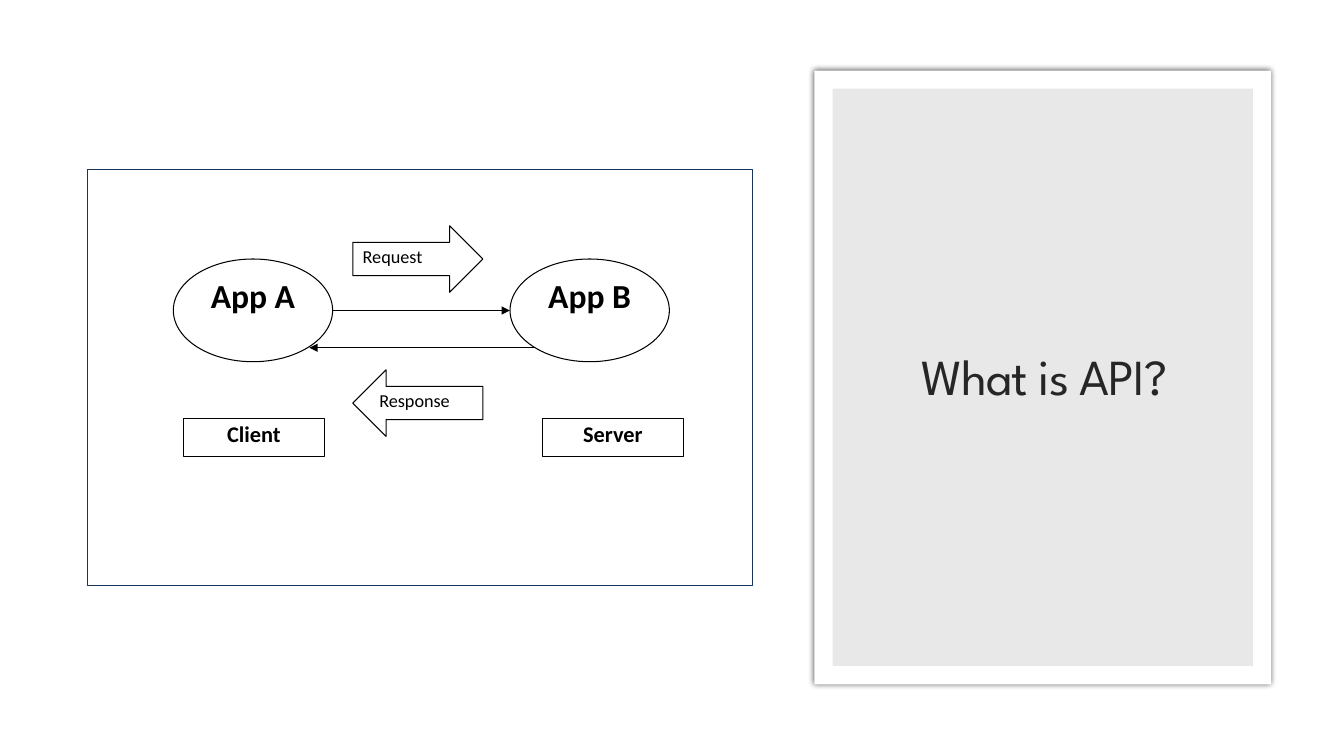
from dataclasses import dataclass
from lxml.etree import SubElement as Sub
from pptx import Presentation as Deck
from pptx.dml.color import RGBColor as Rgb
from pptx.enum.shapes import MSO_CONNECTOR as Link, MSO_SHAPE as Kind
from pptx.enum.text import MSO_ANCHOR as Anchor, MSO_AUTO_SIZE as Fit, PP_ALIGN as Align
from pptx.oxml.ns import qn
from pptx.shapes.autoshape import Shape
from pptx.slide import Slide
from pptx.text.text import TextFrame as Frame
from pptx.util import Pt


@dataclass(frozen=True)
class Theme:
    white: str = "FFFFFF"
    ink: str = "000000"
    navy: str = "17365D"
    grey: str = "D9D9D9"
    dark: str = "262626"
    head: str = "League Spartan"
    body: str = "Calibri"
    title: float = 36
    app: float = 24
    role: float = 16
    call: float = 13
    line: float = 0.75


@dataclass(frozen=True)
class Box:
    left: float
    top: float
    width: float
    height: float

    def inset(self, gap: float) -> "Box":
        return Box(self.left + gap, self.top + gap,
                   self.width - 2 * gap, self.height - 2 * gap)


@dataclass(frozen=True)
class Node:
    text: str
    kind: Kind
    box: Box
    size: float
    bold: bool = True
    align: Align = Align.CENTER


@dataclass(frozen=True)
class Wire:
    start: float
    end: float
    level: float


THEME = Theme()
PANEL = Box(581.8, 50.4, 326.2, 438.5)
TITLE = Box(609.8, 76.3, 272.2, 388.8)
AREA = Box(62.6, 121, 475.2, 297.4)


def app(text: str, left: float) -> Node:
    return Node(text, Kind.OVAL, Box(left, 185, 113.8, 73.4), THEME.app)


def role(text: str, left: float) -> Node:
    return Node(text, Kind.RECTANGLE, Box(left, 298.8, 100.8, 27.4), THEME.role)


def call(text: str, kind: Kind, top: float) -> Node:
    return Node(text, kind, Box(252, top, 92.9, 47.5), THEME.call, False, Align.LEFT)


NODES = (
    app("App A", 123.8),
    app("App B", 364.3),
    role("Client", 131),
    role("Server", 387.4),
    call("Request", Kind.RIGHT_ARROW, 161.3),
    call("Response", Kind.LEFT_ARROW, 264.2),
)
WIRES = (Wire(237.6, 364.3, 221.8), Wire(381.6, 221, 248.4))


def place(item: Shape, box: Box) -> None:
    item.left, item.top = Pt(box.left), Pt(box.top)
    item.width, item.height = Pt(box.width), Pt(box.height)


def shape(slide: Slide, kind: Kind, box: Box, fill: str = "", line: str = "") -> Shape:
    item = slide.shapes.add_shape(kind, 0, 0, 0, 0)
    place(item, box)
    item.shadow.inherit = False
    if fill:
        item.fill.solid()
        item.fill.fore_color.rgb = Rgb.from_string(fill)
    else:
        item.fill.background()
    if line:
        item.line.color.rgb = Rgb.from_string(line)
        item.line.width = Pt(THEME.line)
    else:
        item.line.fill.background()
    return item


def write(frame: Frame, text: str, size: float, face: str, tint: str,
          bold: bool, align: Align, after: float):
    para = frame.paragraphs[0]
    para.alignment = align
    para.line_spacing = 0.9
    para.space_after = Pt(after)
    run = para.add_run()
    run.text = text
    font = run.font
    font.size, font.name, font.bold = Pt(size), face, bold
    font.color.rgb = Rgb.from_string(tint)
    return run


def draw_node(slide: Slide, node: Node) -> None:
    item = shape(slide, node.kind, node.box, THEME.white, THEME.ink)
    frame = item.text_frame
    frame.word_wrap = True
    frame.vertical_anchor = Anchor.TOP
    write(frame, node.text, node.size, THEME.body, THEME.ink, node.bold, node.align, 6)


def draw_wire(slide: Slide, wire: Wire) -> None:
    item = slide.shapes.add_connector(
        Link.STRAIGHT, Pt(wire.start), Pt(wire.level), Pt(wire.end), Pt(wire.level))
    item.line.color.rgb = Rgb.from_string(THEME.ink)
    item.line.width = Pt(THEME.line)
    Sub(item.line._get_or_add_ln(), qn("a:tailEnd"), type="triangle")
    Sub(item.element.spPr, qn("a:effectLst"))


def draw_panel(slide: Slide) -> None:
    card = shape(slide, Kind.RECTANGLE, PANEL, THEME.white)
    glow = Sub(card.element.spPr.find(qn("a:effectLst")), qn("a:outerShdw"),
               blurRad=str(Pt(4)), dist="0", dir="0", algn="ctr", rotWithShape="0")
    tint = Sub(glow, qn("a:srgbClr"), val=THEME.ink)
    Sub(tint, qn("a:alpha"), val="66000")
    plate = shape(slide, Kind.RECTANGLE, PANEL.inset(13), THEME.grey)
    tint = plate.element.spPr.find(qn("a:solidFill")).find(qn("a:srgbClr"))
    Sub(tint, qn("a:alpha"), val="60000")


def draw_title(slide: Slide) -> None:
    title = slide.shapes.title
    place(title, TITLE)
    title.element.getparent().append(title.element)
    frame = title.text_frame
    frame.word_wrap = True
    frame.auto_size = Fit.NONE
    frame.vertical_anchor = Anchor.MIDDLE
    run = write(frame, "What is API?", THEME.title, THEME.head, THEME.dark,
                False, Align.CENTER, 0)
    run.font._element.set("spc", "-70")


def main() -> None:
    deck = Deck()
    deck.slide_width, deck.slide_height = Pt(960), Pt(540)
    slide = deck.slides.add_slide(deck.slide_layouts[5])
    draw_panel(slide)
    draw_title(slide)
    shape(slide, Kind.RECTANGLE, AREA, line=THEME.navy)
    for node in NODES:
        draw_node(slide, node)
    for wire in WIRES:
        draw_wire(slide, wire)
    deck.save("out.pptx")


if __name__ == "__main__":
    main()
